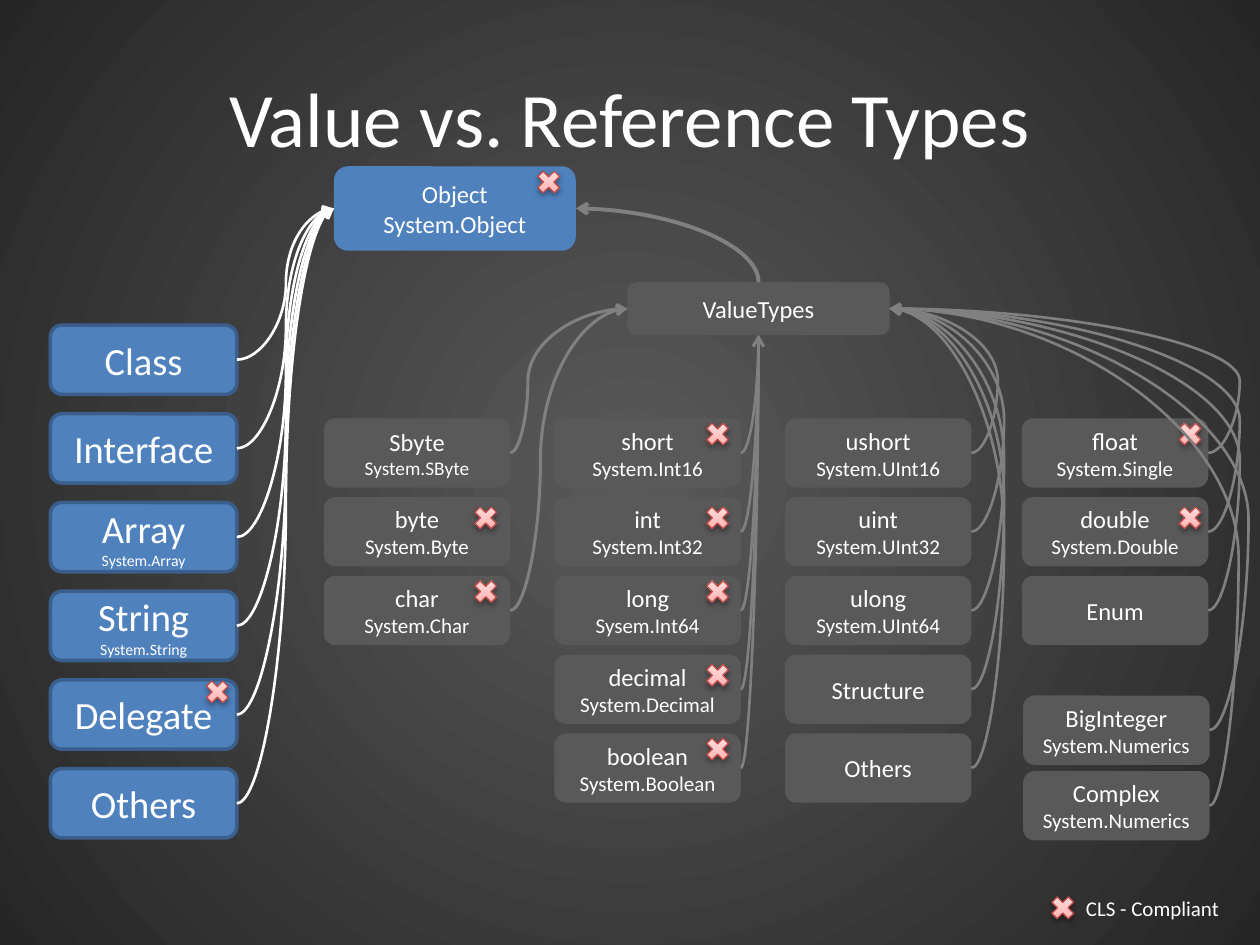
from dataclasses import dataclass

import lxml.etree
import pptx
import pptx.dml.color
import pptx.enum.shapes
import pptx.enum.text
import pptx.oxml.ns
import pptx.util

Inches = pptx.util.Inches
qn = pptx.oxml.ns.qn
TOP, LEFT, BOTTOM, RIGHT = range(4)
BOX_SIZE = (1.48, 0.55)
CENTER = pptx.enum.text.PP_ALIGN.CENTER


@dataclass(frozen=True)
class Theme:
    font: str = "Calibri"
    white: str = "FFFFFF"
    blue: str = "4F81BD"
    blue_edge: str = "3A5F8C"
    gray: str = "595959"
    gray_line: str = "808080"
    cross_edge: str = "BF4C48"
    background: tuple = ((0, "595959"), (100, "262626"))
    cross: tuple = ((0, "FFA6A5"), (35, "FFC0BF"), (100, "FFE7E7"))
    title: int = 44
    reference: int = 22
    reference_detail: int = 9
    name: int = 14
    detail: int = 12


THEME = Theme()

# Each entry: name, full name (or empty), CLS compliant
REFERENCE_TYPES = [
    ("Class", "", False),
    ("Interface", "", False),
    ("Array", "System.Array", False),
    ("String", "System.String", False),
    ("Delegate", "", True),
    ("Others", "", False),
]

# Each column: left, cross left, site on ValueTypes, line width, turns, entries
VALUE_COLUMNS = [
    (2.57, 3.73, LEFT, 1.75, [4.19, 4.29, 4.29], [
        ("Sbyte", "System.SByte", False),
        ("byte", "System.Byte", True),
        ("char", "System.Char", True)]),
    (4.4, 5.57, BOTTOM, 1.5, [None] * 5, [
        ("short", "System.Int16", True),
        ("int", "System.Int32", True),
        ("long", "Sysem.Int64", True),
        ("decimal", "System.Decimal", True),
        ("boolean", "System.Boolean", True)]),
    (6.23, None, RIGHT, 1.5, [7.92] + [7.97] * 4, [
        ("ushort", "System.UInt16", False),
        ("uint", "System.UInt32", False),
        ("ulong", "System.UInt64", False),
        ("Structure", "", False),
        ("Others", "", False)]),
    (8.11, 9.32, RIGHT, 1.5, [9.84] * 3, [
        ("float", "System.Single", True),
        ("double", "System.Double", True),
        ("Enum", "", False)]),
]
UNCONNECTED = {"byte"}
DETAIL_SIZES = {"System.SByte": 11}
NUMERICS = [("BigInteger", 5.52, 9.91), ("Complex", 6.12, 9.83)]


def rgb(value):
    return pptx.dml.color.RGBColor.from_string(value)


def add_node(parent, tag, **attributes):
    node = lxml.etree.SubElement(parent, qn(tag))
    for key, value in attributes.items():
        node.set(key, str(value))
    return node


def set_gradient(fill, owner, stops, radial):
    fill.gradient()
    gradient = owner.find(".//" + qn("a:gradFill"))
    for child in list(gradient):
        gradient.remove(child)
    stop_list = add_node(gradient, "a:gsLst")
    for position, color in stops:
        stop = add_node(stop_list, "a:gs", pos=position * 1000)
        add_node(stop, "a:srgbClr", val=color)
    if radial:
        direction = add_node(gradient, "a:path", path="circle")
        add_node(direction, "a:fillToRect", l=50000, t=50000, r=50000, b=50000)
    else:
        add_node(gradient, "a:lin", ang=270 * 60000, scaled=1)


def write_lines(text_frame, lines, alignment=None):
    """Write one paragraph for each (text, size) pair."""
    for index, (text, size) in enumerate(lines):
        paragraph = text_frame.add_paragraph() if index else text_frame.paragraphs[0]
        paragraph.alignment = alignment
        run = paragraph.add_run()
        run.text = text
        run.font.name = THEME.font
        run.font.size = pptx.util.Pt(size)
        run.font.color.rgb = rgb(THEME.white)


def add_text(slide, bounds, text, size, alignment=None, wrap=True):
    text_box = slide.shapes.add_textbox(*map(Inches, bounds))
    text_box.text_frame.word_wrap = wrap
    text_box.text_frame.vertical_anchor = pptx.enum.text.MSO_ANCHOR.MIDDLE
    write_lines(text_box.text_frame, [(text, size)], alignment)


def add_box(slide, bounds, lines, fill, edge=None):
    shape = slide.shapes.add_shape(
        pptx.enum.shapes.MSO_SHAPE.ROUNDED_RECTANGLE, *map(Inches, bounds))
    shape.shadow.inherit = False
    shape.fill.solid()
    shape.fill.fore_color.rgb = rgb(fill)
    if edge:
        shape.line.color.rgb = rgb(edge)
        shape.line.width = pptx.util.Pt(2)
    else:
        shape.line.fill.background()
    shape.text_frame.word_wrap = True
    shape.text_frame.vertical_anchor = pptx.enum.text.MSO_ANCHOR.MIDDLE
    write_lines(shape.text_frame, [line for line in lines if line[0]], CENTER)
    return shape


def add_value_box(slide, left, top, name, detail):
    lines = [(name, THEME.name), (detail, DETAIL_SIZES.get(detail, THEME.detail))]
    return add_box(slide, (left, top, *BOX_SIZE), lines, THEME.gray)


def add_cross(slide, left, top):
    shape = slide.shapes.add_shape(
        pptx.enum.shapes.MSO_SHAPE.MATH_MULTIPLY,
        Inches(left), Inches(top), Inches(0.25), Inches(0.25))
    set_gradient(shape.fill, shape._element.spPr, THEME.cross, radial=False)
    shape.line.color.rgb = rgb(THEME.cross_edge)
    shape.line.width = pptx.util.Pt(0.75)
    shape.shadow.inherit = False
    effects = shape._element.spPr.find(qn("a:effectLst"))
    shadow = add_node(effects, "a:outerShdw", blurRad=40000, dist=20000,
                      dir=90 * 60000, rotWithShape=0)
    add_node(add_node(shadow, "a:srgbClr", val="000000"), "a:alpha", val=38000)


def add_curve(slide, begin, begin_site, end, end_site, color, width, turn=None):
    """Join two boxes; turn is the x of the bend, None for a single-bend curve."""
    connector = slide.shapes.add_connector(
        pptx.enum.shapes.MSO_CONNECTOR.CURVE, 0, 0, 0, 0)
    connector.begin_connect(begin, begin_site)
    connector.end_connect(end, end_site)
    connector.line.color.rgb = rgb(color)
    connector.line.width = pptx.util.Pt(width)
    properties = connector._element.spPr
    add_node(properties.find(qn("a:ln")), "a:tailEnd", type="arrow")
    add_node(properties, "a:effectLst")
    geometry = properties.find(qn("a:prstGeom"))
    if turn is None:
        geometry.set("prst", "curvedConnector2")
    else:
        span = connector.end_x - connector.begin_x
        share = round((Inches(turn) - connector.begin_x) / span * 100000)
        add_node(geometry.find(qn("a:avLst")), "a:gd", name="adj1", fmla=f"val {share}")
    return connector


def stand_upright(connector):
    """Turn a single-bend curve so that it leaves its first box vertically."""
    width, height = connector.width, connector.height
    connector.left += (width - height) // 2
    connector.top += (height - width) // 2
    connector.width, connector.height = height, width
    connector.rotation = 270
    connector._element.spPr.xfrm.flipH = False


def main():
    presentation = pptx.Presentation()
    presentation.slide_width, presentation.slide_height = Inches(10), Inches(7.5)
    slide = presentation.slides.add_slide(presentation.slide_layouts[6])
    set_gradient(slide.background.fill, slide._element, THEME.background, radial=True)
    add_text(slide, (0.5, 0.3, 9, 1.25), "Value vs. Reference Types", THEME.title, CENTER)
    crosses = [(4.23, 1.32), (8.31, 7.08)]

    # Roots of the two hierarchies
    root = add_box(slide, (2.65, 1.32, 1.92, 0.67),
                   [("Object", THEME.name), ("System.Object", THEME.name)], THEME.blue)
    value_types = add_box(slide, (4.98, 2.24, 2.08, 0.42),
                          [("ValueTypes", THEME.name)], THEME.gray)
    stand_upright(add_curve(slide, value_types, TOP, root, RIGHT, THEME.gray_line, 2.25))

    # Value types
    for left, cross_left, site, width, turns, entries in VALUE_COLUMNS:
        for row, (name, detail, compliant) in enumerate(entries):
            top = 3.32 + 0.625 * row
            box = add_value_box(slide, left, top, name, detail)
            if name not in UNCONNECTED:
                add_curve(slide, box, RIGHT, value_types, site,
                          THEME.gray_line, width, turns[row])
            if compliant:
                crosses.append((cross_left, top + 0.04 * (row % 2)))

    # Reference types
    for row, (name, detail, compliant) in enumerate(REFERENCE_TYPES):
        top = 2.58 + 0.704 * row
        lines = [(name, THEME.reference), (detail, THEME.reference_detail)]
        box = add_box(slide, (0.4, top, *BOX_SIZE), lines, THEME.blue, THEME.blue_edge)
        add_curve(slide, box, RIGHT, root, LEFT, THEME.white, 1.5, 2.27)
        if compliant:
            crosses.append((1.6, top - 0.03))

    # Compliance marks and legend
    for left, top in crosses:
        add_cross(slide, left, top)
    add_text(slide, (8.52, 7.06, 1.27, 0.3), "CLS - Compliant", THEME.detail, wrap=False)

    # Numerics, in front of the marks
    for name, top, turn in NUMERICS:
        box = add_value_box(slide, 8.12, top, name, "System.Numerics")
        add_curve(slide, box, RIGHT, value_types, RIGHT, THEME.gray_line, 1.5, turn)

    presentation.save("out.pptx")


if __name__ == "__main__":
    main()
